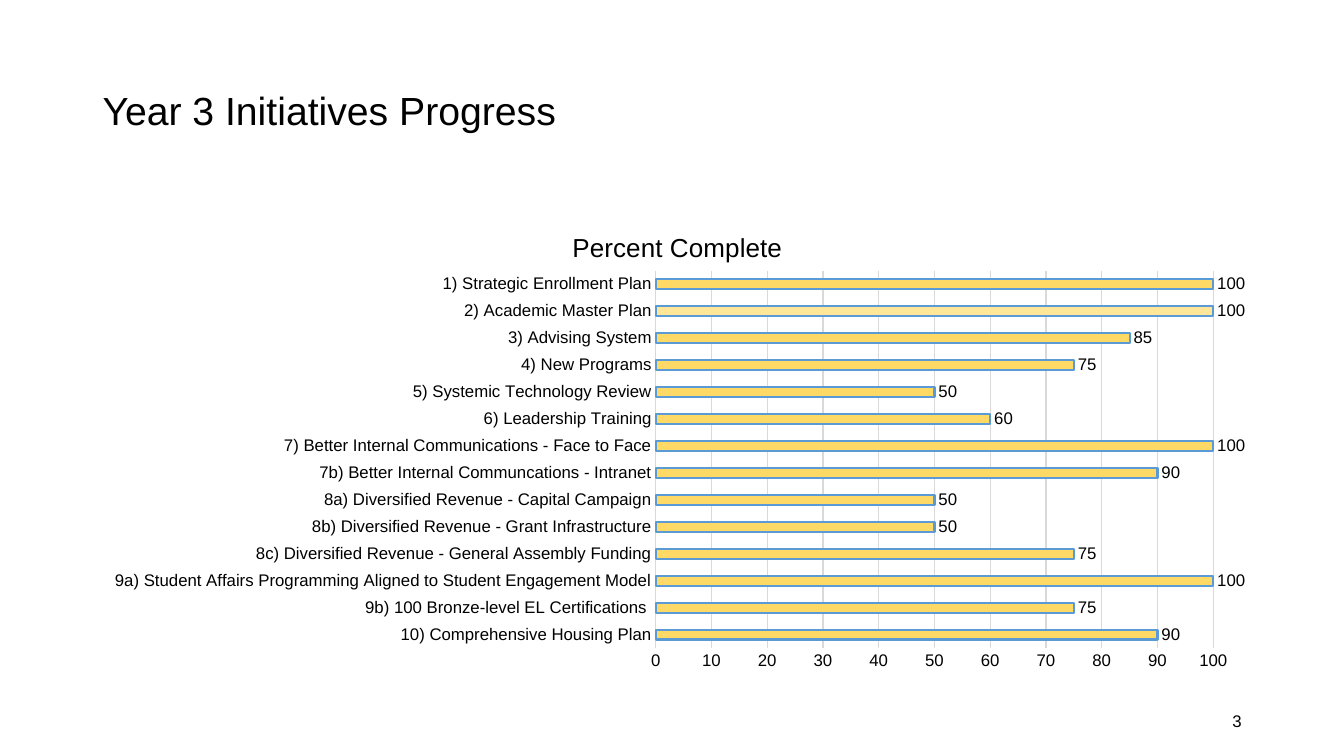
from lxml import etree
from pptx import Presentation
from pptx.chart import data
from pptx.dml import color
from pptx.enum import chart as kinds, text
from pptx.oxml import ns
from pptx.util import Cm, Pt

HUES = {"ink": "000000", "gold": "FFD966", "pale": "FFE699",
        "edge": "5B9BD5", "grid": "D9D9D9"}
FACE = "Arial"
GOALS = [
    ("1) Strategic Enrollment Plan", 100),
    ("2) Academic Master Plan", 100),
    ("3) Advising System", 85),
    ("4) New Programs", 75),
    ("5) Systemic Technology Review", 50),
    ("6) Leadership Training", 60),
    ("7) Better Internal Communications - Face to Face", 100),
    ("7b) Better Internal Communcations - Intranet", 90),
    ("8a) Diversified Revenue - Capital Campaign", 50),
    ("8b) Diversified Revenue - Grant Infrastructure", 50),
    ("8c) Diversified Revenue - General Assembly Funding", 75),
    ("9a) Student Affairs Programming Aligned to Student Engagement Model", 100),
    ("9b) 100 Bronze-level EL Certifications ", 75),
    ("10) Comprehensive Housing Plan", 90),
]
PALE_GOAL = "2) Academic Master Plan"


def hue(name):
    return color.RGBColor.from_string(HUES[name])


def style(font, size):
    font.name = FACE
    font.size = Pt(size)
    font.bold = False
    font.color.rgb = hue("ink")


def stroke(line, name, width):
    line.color.rgb = hue(name)
    line.width = Pt(width)


def paint(item, name):
    item.format.fill.solid()
    item.format.fill.fore_color.rgb = hue(name)
    stroke(item.format.line, "edge", 1.5)


def set_layout(parent, index, **parts):
    for old in parent.findall(ns.qn("c:layout")):
        parent.remove(old)
    layout = etree.Element(ns.qn("c:layout"))
    manual = etree.SubElement(layout, ns.qn("c:manualLayout"))
    for tag, value in parts.items():
        etree.SubElement(manual, ns.qn("c:" + tag)).set("val", str(value))
    parent.insert(index, layout)


def add_title(slide, box):
    title = slide.shapes.title
    title.left, title.top, title.width, title.height = box
    frame = title.text_frame
    frame.text = "Year 3 Initiatives Progress"
    frame.vertical_anchor = text.MSO_ANCHOR.MIDDLE
    line = frame.paragraphs[0]
    line.alignment = text.PP_ALIGN.LEFT
    line.line_spacing = 0.9
    style(line.font, 28)


def style_axes(chart):
    for axis in (chart.category_axis, chart.value_axis):
        axis.major_tick_mark = kinds.XL_TICK_MARK.NONE
        axis.minor_tick_mark = kinds.XL_TICK_MARK.NONE
        style(axis.tick_labels.font, 12)
    stroke(chart.category_axis.format.line, "grid", 0.75)
    axis = chart.value_axis
    axis.format.line.fill.background()
    axis.minimum_scale, axis.maximum_scale, axis.major_unit = 0, 100, 10
    axis.tick_labels.number_format = "0"
    axis.tick_labels.number_format_is_linked = False
    axis.has_major_gridlines = True
    stroke(axis.major_gridlines.format.line, "grid", 0.75)


def style_bars(plot, names):
    plot.gap_width = 182
    plot.vary_by_categories = False
    bars = plot.series[0]
    paint(bars, "gold")
    paint(bars.points[names.index(PALE_GOAL)], "pale")
    labels = bars.data_labels
    labels.show_value = True
    labels.number_format = "0"
    labels.number_format_is_linked = False
    labels.position = kinds.XL_LABEL_POSITION.OUTSIDE_END
    style(labels.font, 12)


def add_bars(slide, box):
    names, values = zip(*reversed(GOALS))
    table = data.CategoryChartData(number_format="0")
    table.categories = names
    table.add_series("Series 1", values)
    chart = slide.shapes.add_chart(
        kinds.XL_CHART_TYPE.BAR_CLUSTERED, *box, table).chart
    style(chart.font, 10)
    chart.has_legend = False
    chart.has_title = True
    head = chart.chart_title
    head.text_frame.text = "Percent Complete"
    style(head.text_frame.paragraphs[0].font, 18.6)
    head.include_in_layout = False
    set_layout(head._element, 1, xMode="edge", yMode="edge", x=0.41, y=0.05)
    style_axes(chart)
    style_bars(chart.plots[0], names)
    area = chart._chartSpace.find(".//" + ns.qn("c:plotArea"))
    set_layout(area, 0, layoutTarget="inner", xMode="edge", yMode="edge",
               x=0.486, y=0.145, w=0.481, h=0.787)


def add_number(slide, box):
    frame = slide.shapes.add_textbox(*box).text_frame
    frame.word_wrap = True
    frame.vertical_anchor = text.MSO_ANCHOR.MIDDLE
    frame.text = "3"
    line = frame.paragraphs[0]
    line.alignment = text.PP_ALIGN.RIGHT
    style(line.font, 12)


def main():
    deck = Presentation()
    deck.slide_width, deck.slide_height = Cm(33.87), Cm(19.05)
    slide = deck.slides.add_slide(deck.slide_layouts[5])
    left, width = Cm(2.33), Cm(29.21)
    add_title(slide, (left, Cm(1.01), width, Cm(3.68)))
    add_bars(slide, (left, Cm(5.07), width, Cm(12.09)))
    wide = Cm(7.62)
    add_number(slide, (left + width - wide, Cm(17.66), wide, Cm(1.01)))
    deck.save("out.pptx")


if __name__ == "__main__":
    main()
